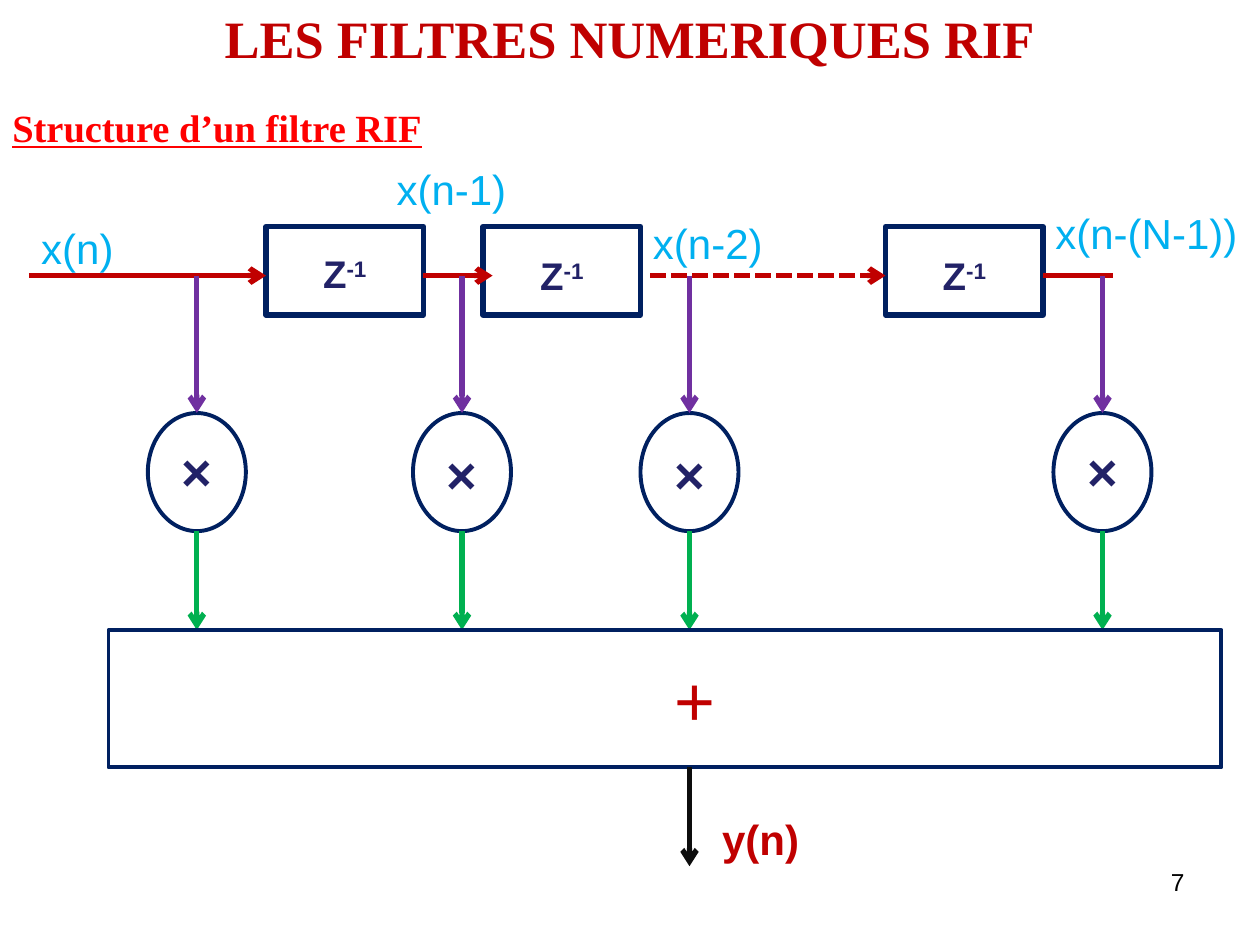
from pptx import Presentation
from pptx.dml.color import RGBColor
from pptx.enum.dml import MSO_LINE
from pptx.enum.shapes import MSO_CONNECTOR, MSO_SHAPE
from pptx.enum.text import MSO_ANCHOR, MSO_AUTO_SIZE, PP_ALIGN
from pptx.oxml.ns import qn
from pptx.util import Pt
from lxml import etree

LEFT, CENTER, RIGHT = PP_ALIGN.LEFT, PP_ALIGN.CENTER, PP_ALIGN.RIGHT
RECT, OVAL = MSO_SHAPE.RECTANGLE, MSO_SHAPE.OVAL
DASH = MSO_LINE.SQUARE_DOT
STRAIGHT = MSO_CONNECTOR.STRAIGHT
TOP, NO_FIT = MSO_ANCHOR.TOP, MSO_AUTO_SIZE.NONE

NAVY, INDIGO, RED, PURPLE = "002060", "222267", "C00000", "7030A0"
GREEN, SKY, BLACK = "00B050", "00B0F0", "0D0D0D"
TAPS = (112.5, 264, 394, 630)


def color(value):
    """Return the colour of a hex string."""
    return RGBColor.from_string(value)


def write(holder, text, size, ink, font="Arial", bold=False, align=LEFT):
    """Fill a text holder with one formatted line and return its paragraph."""
    frame = holder.text_frame
    frame.text = text
    frame.word_wrap = True
    frame.auto_size = NO_FIT
    frame.vertical_anchor = TOP
    if align == LEFT:
        frame.margin_right = 0
    line = frame.paragraphs[0]
    line.alignment = align
    for run in line.runs:
        style(run, size, ink, font, bold)
    return line


def style(run, size, ink, font="Arial", bold=False):
    """Set the font of a run."""
    run.font.name = font
    run.font.size = Pt(size)
    run.font.bold = bold
    run.font.color.rgb = color(ink)


def add_label(slide, box, text, size, ink, **options):
    """Add a text box with one line and return its paragraph."""
    label = slide.shapes.add_textbox(*map(Pt, box))
    return write(label, text, size, ink, **options)


def add_block(slide, kind, box, weight):
    """Add an unfilled navy outline."""
    block = slide.shapes.add_shape(kind, *map(Pt, box))
    block.shadow.inherit = False
    block.fill.background()
    block.line.color.rgb = color(NAVY)
    block.line.width = Pt(weight)


def add_wire(slide, start, end, ink, dash=None, arrow=True):
    """Join two points with a signal line."""
    wire = slide.shapes.add_connector(STRAIGHT, *map(Pt, (*start, *end)))
    wire.line.color.rgb = color(ink)
    wire.line.width = Pt(3)
    if dash:
        wire.line.dash_style = dash
    if arrow:
        outline = wire.line._get_or_add_ln()
        etree.SubElement(outline, qn("a:tailEnd"), type="arrow")
    etree.SubElement(wire._element.spPr, qn("a:effectLst"))


def add_headings(slide, box):
    """Place the title and the underlined subtitle."""
    left, top, width = box
    title = slide.shapes.title
    title.left, title.top, title.width, title.height = map(
        Pt, (left, top, width, 44))
    write(title, "LES FILTRES NUMERIQUES RIF", 30, RED,
          font="Times New Roman", bold=True, align=CENTER)
    subtitle = add_label(slide, (left, top + 56, width, 34),
                         "Structure d’un filtre RIF", 22, "FF0000",
                         font="Times New Roman", bold=True)
    subtitle.runs[0].font.underline = True


def add_delay_line(slide, box):
    """Place the delay cells, the input signal and its delayed copies."""
    left, top, width, height = box
    axis = top + 28
    for offset, drop in ((135.5, 10), (259.5, 11), (489.5, 11)):
        cell = left + offset
        add_block(slide, RECT, (cell, top, 90, height), 3)
        delay = add_label(slide, (cell, top + drop, 90, 34), "Z", 22, INDIGO,
                          bold=True, align=CENTER)
        exponent = delay.add_run()
        exponent.text = "-1"
        style(exponent, 22, INDIGO, bold=True)
        exponent.font._element.set("baseline", "30000")
    for start, end, dash, arrow in ((0, 135.5, None, True),
                                    (225, 265, None, True),
                                    (355, 489.5, DASH, True),
                                    (579.5, width, None, False)):
        add_wire(slide, (left + start, axis), (left + end, axis), RED,
                 dash, arrow)
    for text, offset, rise, span in (("x(n)", 0, 6, 56),
                                     ("x(n-1)", 203, 39.5, 79),
                                     ("x(n-2)", 349.5, 8.5, 79),
                                     ("x(n-(N-1))", 579.5, 14.5, 124)):
        add_label(slide, (left + offset, top - rise, span, 36), text, 24, SKY)


def add_multiplier(slide, box, drop):
    """Place a multiplier with its arrows from the line and to the adder."""
    left, top, width, height = box
    middle = left + width / 2
    circle_top, circle_bottom = top + 78.5, top + 146
    add_block(slide, OVAL, (left, circle_top, width, 67.5), 2.25)
    add_wire(slide, (middle, top), (middle, circle_top), PURPLE)
    add_wire(slide, (middle, circle_bottom), (middle, top + height), GREEN)
    add_label(slide, (middle - 22.5, circle_top + drop, 45, 44), "×", 30,
              INDIGO, bold=True, align=CENTER)


def add_adder(slide, box, output):
    """Place the adder and the output signal."""
    left, top, width, height = box
    bottom = top + height
    add_block(slide, RECT, box, 2.25)
    add_label(slide, (left + 270, top + 11.5, 130, 55), "+", 40, RED,
              align=CENTER)
    add_wire(slide, (output, bottom), (output, bottom + 56.5), BLACK)
    add_label(slide, (output + 11.5, bottom + 23, 68, 36), "y(n)", 24, RED,
              bold=True)


def main():
    """Build and save the slide."""
    deck = Presentation()
    deck.slide_width, deck.slide_height = Pt(720), Pt(540)
    slide = deck.slides.add_slide(deck.slide_layouts.get_by_name("Title Only"))
    add_headings(slide, (0, 0, 720))
    add_delay_line(slide, (16.5, 129.5, 619.5, 50.5))
    for tap, drop in zip(TAPS, (11.5, 13, 13, 11.5)):
        add_multiplier(slide, (tap - 28, 157.5, 56, 202.5), drop)
    add_adder(slide, (62, 360, 636, 78.5), TAPS[2])
    add_label(slide, (516, 492, 168, 37.5), "7", 14, "000000", align=RIGHT)
    deck.save("out.pptx")


if __name__ == "__main__":
    main()
